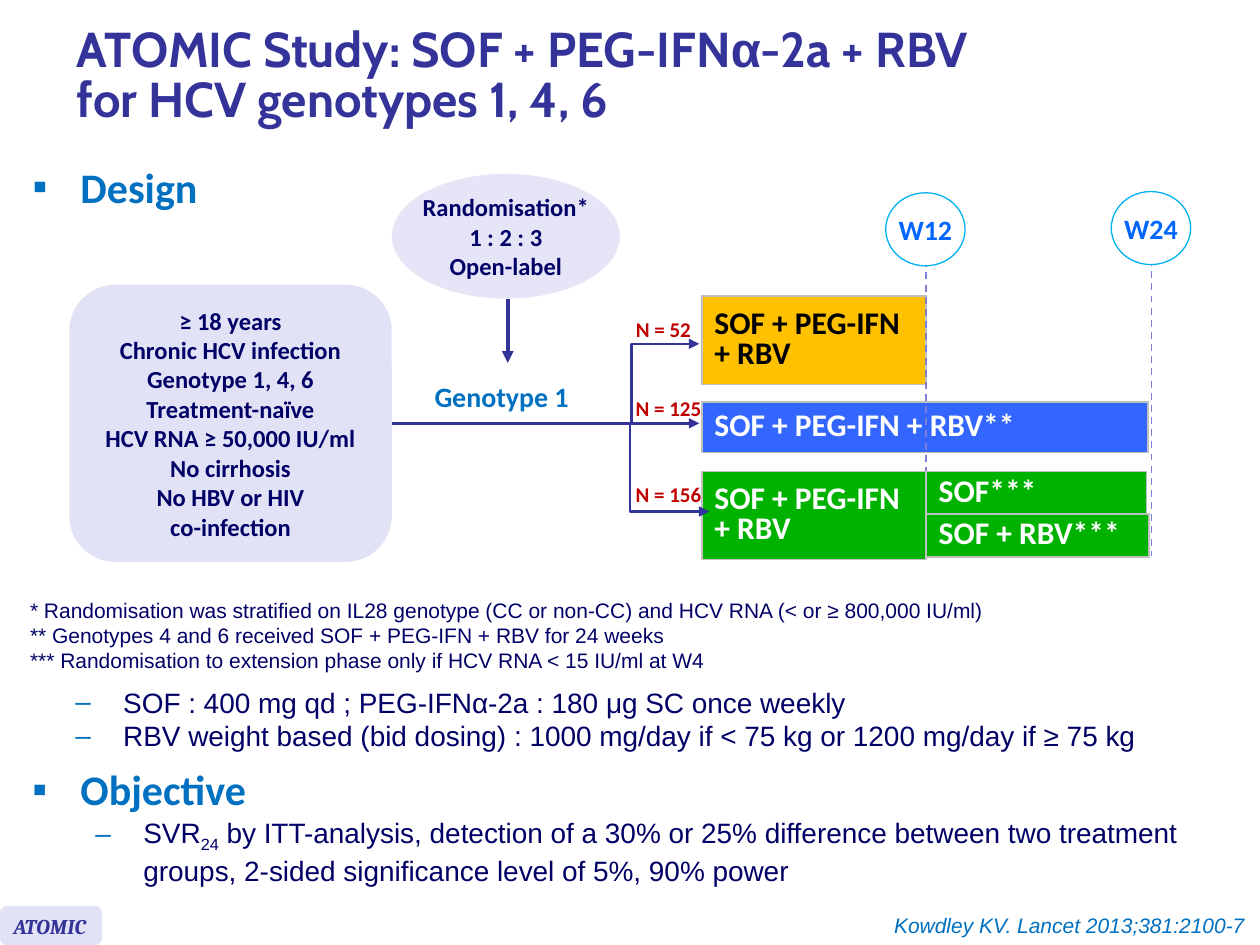
from lxml import etree
from pptx import Presentation
from pptx import util as u
from pptx.dml.color import RGBColor
from pptx.enum import dml, shapes, text
from pptx.oxml import ns

# The slide is a grid of 100 columns by 75 rows of square units.
UNIT = u.Inches(0.1)

NAVY = RGBColor(0x00, 0x00, 0x66)
INDIGO = RGBColor(0x33, 0x33, 0x99)
BLUE = RGBColor(0x00, 0x70, 0xC0)
BRIGHT_BLUE = RGBColor(0x00, 0x66, 0xFF)
SKY = RGBColor(0x00, 0xB0, 0xF0)
ROYAL = RGBColor(0x33, 0x66, 0xFF)
DASH = RGBColor(0x7E, 0x7E, 0xD4)
LAVENDER = RGBColor(0xE2, 0xE2, 0xF6)
PALE = RGBColor(0xE5, 0xE5, 0xF7)
AMBER = RGBColor(0xFF, 0xC0, 0x00)
GREEN = RGBColor(0x00, 0xB2, 0x00)
RED = RGBColor(0xC0, 0x00, 0x00)
SILVER = RGBColor(0xC0, 0xC0, 0xC0)
WHITE = RGBColor(0xFF, 0xFF, 0xFF)
BLACK = RGBColor(0x00, 0x00, 0x00)

CENTER, RIGHT = text.PP_ALIGN.CENTER, text.PP_ALIGN.RIGHT
MIDDLE = text.MSO_ANCHOR.MIDDLE

ARMS_LEFT, WEEK_12, WEEK_24 = 55.7, 73.5, 91.4
ARM_WIDTH = WEEK_12 - ARMS_LEFT
TRUNK_LEFT, TRUNK_TOP = 31.1, 33.6


def grid(*units):
    return [int(unit * UNIT) for unit in units]


def add_element(parent, tag, **attributes):
    return etree.SubElement(parent, ns.qn(tag), attributes)


def add_run(paragraph, words, size, color, font="Calibri", bold=False, italic=False):
    """Add a run, turning each newline into a line break."""
    for index, line in enumerate(words.split("\n")):
        if index:
            paragraph.add_line_break()
        run = paragraph.add_run()
        run.text = line
        run.font.size = u.Pt(size)
        run.font.name = font
        run.font.bold = bold
        run.font.italic = italic
        run.font.color.rgb = color
    return run


def write_lines(frame, lines, size, color, align=None, **style):
    for index, line in enumerate(lines):
        paragraph = frame.add_paragraph() if index else frame.paragraphs[0]
        paragraph.alignment = align
        add_run(paragraph, line, size, color, **style)


def add_box(slide, at, wrap=True):
    frame = slide.shapes.add_textbox(*grid(*at)).text_frame
    frame.word_wrap = wrap
    return frame


def add_label(slide, at, lines, size, color, align=None, wrap=True, **style):
    write_lines(add_box(slide, at, wrap), lines, size, color, align, **style)


def set_bullet(paragraph, character, indent, level=0):
    paragraph.level = level
    properties = paragraph._p.get_or_add_pPr()
    properties.set("marL", str(u.Inches(indent)))
    properties.set("indent", str(-u.Inches(0.38)))
    color = add_element(properties, "a:buClr")
    add_element(color, "a:srgbClr", val=str(BLUE))
    add_element(properties, "a:buFont", typeface="Arial")
    add_element(properties, "a:buChar", char=character)


def add_heading(frame, words):
    paragraph = frame.paragraphs[0]
    set_bullet(paragraph, "▪", 0.38)
    add_run(paragraph, words, 24, BLUE, bold=True)


def add_panel(slide, kind, at, fill, line=None, lines=(), size=14, color=NAVY, wrap=True):
    shape = slide.shapes.add_shape(kind, *grid(*at))
    shape.shadow.inherit = False
    shape.fill.solid()
    shape.fill.fore_color.rgb = fill
    if line is None:
        shape.line.fill.background()
    else:
        shape.line.color.rgb = line
        shape.line.width = u.Pt(0.75)
    frame = shape.text_frame
    frame.word_wrap = wrap
    frame.vertical_anchor = MIDDLE
    write_lines(frame, lines, size, color, CENTER, bold=True)
    return shape


def add_line(slide, start, end, color=INDIGO, width=1.5, arrow=True, bend=None):
    """Draw a connector; bend is the share of its width where an elbow turns."""
    kind = shapes.MSO_CONNECTOR.STRAIGHT if bend is None else shapes.MSO_CONNECTOR.ELBOW
    connector = slide.shapes.add_connector(kind, *grid(*start, *end))
    connector.line.color.rgb = color
    connector.line.width = u.Pt(width)
    properties = connector._element.spPr
    if arrow:
        add_element(connector.line._get_or_add_ln(), "a:tailEnd", type="triangle")
    else:
        connector.line.dash_style = dml.MSO_LINE.DASH
    add_element(properties, "a:effectLst")
    if bend is not None:
        adjustments = properties.find(".//" + ns.qn("a:avLst"))
        add_element(adjustments, "a:gd", name="adj1", fmla=f"val {round(bend * 100000)}")


def add_arm(slide, at, words, fill, color=WHITE):
    """Add a treatment arm as a one-cell table."""
    table = slide.shapes.add_table(1, 1, *grid(*at)).table
    table.first_row = table.horz_banding = False
    cell = table.cell(0, 0)
    cell.vertical_anchor = MIDDLE
    properties = cell._tc.get_or_add_tcPr()
    for side in ("L", "R", "T", "B"):
        border = add_element(properties, f"a:ln{side}", w=str(u.Pt(1)))
        add_element(add_element(border, "a:solidFill"), "a:srgbClr", val=str(SILVER))
    cell.fill.solid()
    cell.fill.fore_color.rgb = fill
    paragraph = cell.text_frame.paragraphs[0]
    paragraph.line_spacing = 0.8
    add_run(paragraph, words, 18, color, bold=True)


def add_title(slide):
    title = slide.shapes.title
    title.left, title.top, title.width, title.height = grid(5.1, 0.8, 91.3, 10.7)
    frame = title.text_frame
    frame.auto_size = text.MSO_AUTO_SIZE.NONE
    frame.vertical_anchor = MIDDLE
    paragraph = frame.paragraphs[0]
    paragraph.alignment = text.PP_ALIGN.LEFT
    paragraph.line_spacing = 0.85
    for words, font in (("ATOMIC Study: SOF + PEG-IFN", "Cabin"), ("α", "Arial"),
                        ("-2a + RBV\nfor HCV genotypes 1, 4, 6", "Cabin")):
        add_run(paragraph, words, 28, INDIGO, font, bold=True)


def add_design(slide):
    add_heading(add_box(slide, (1.6, 12.3, 19.8, 6.3)), "Design")
    add_line(slide, (40.3, 23.7), (40.3, 28.8), width=2.25)
    randomisation = add_panel(
        slide, shapes.MSO_SHAPE.OVAL, (31.1, 13.8, 18.1, 9.9), PALE,
        lines=("Randomisation*", "1 : 2 : 3", "Open-label"), wrap=False)
    frame = randomisation.text_frame
    frame.margin_left = frame.margin_right = frame.margin_top = frame.margin_bottom = 0
    add_panel(slide, shapes.MSO_SHAPE.ROUNDED_RECTANGLE, (5.5, 22.6, 25.6, 22), LAVENDER,
              lines=("≥ 18 years", "Chronic HCV infection", "Genotype 1, 4, 6",
                     "Treatment-naïve", "HCV RNA ≥ 50,000 IU/ml", "No cirrhosis",
                     "No HBV or HIV\nco-infection"))

    add_arm(slide, (ARMS_LEFT, 23.5, ARM_WIDTH, 7), "SOF + PEG-IFN + RBV", AMBER, BLACK)
    add_arm(slide, (ARMS_LEFT, 31.9, 35.4, 4), "SOF + PEG-IFN + RBV**", ROYAL)
    for week, left, top in (("W12", WEEK_12, 15.3), ("W24", WEEK_24, 15.2)):
        add_line(slide, (left, top + 4.4), (left, 44.1), DASH, 1, arrow=False)
        add_panel(slide, shapes.MSO_SHAPE.OVAL, (left - 3.2, top, 6.3, 5.8), WHITE, SKY,
                  (week,), 16, BRIGHT_BLUE, wrap=False)
    add_arm(slide, (ARMS_LEFT, 37.4, ARM_WIDTH, 7), "SOF + PEG-IFN + RBV", GREEN)
    add_arm(slide, (WEEK_12, 40.8, 17.7, 3.4), "SOF + RBV***", GREEN)
    add_arm(slide, (WEEK_12, 37.4, 17.5, 3.4), "SOF***", GREEN)

    for count, top, width in ((52, 24.6, 6.5), (125, 30.9, 7.3), (156, 37.7, 7.3)):
        add_label(slide, (49.4, top, width, 3), (f"N = {count}",), 12, RED, CENTER,
                  wrap=False, bold=True)
    add_label(slide, (33.5, 29.6, 12.8, 3.7), ("Genotype 1",), 16, BLUE, wrap=False, bold=True)
    for end, bend in (((55.5, TRUNK_TOP), None), ((55.5, 27.3), 0.78), ((56.3, 40.6), 0.75)):
        add_line(slide, (TRUNK_LEFT, TRUNK_TOP), end, bend=bend)


def add_notes_and_doses(slide):
    add_label(slide, (1.4, 46.9, 97.4, 7.1), (
        "* Randomisation was stratified on IL28 genotype (CC or non-CC) and HCV RNA "
        "(< or ≥ 800,000 IU/ml)",
        "** Genotypes 4 and 6 received SOF + PEG-IFN + RBV for 24 weeks",
        "*** Randomisation to extension phase only if HCV RNA < 15 IU/ml at W4",
    ), 12, NAVY, font="Arial")
    doses = add_box(slide, (0, 53.9, 100, 6.4))
    write_lines(doses, (
        "SOF : 400 mg qd ; PEG-IFNα-2a : 180 μg SC once weekly",
        "RBV weight based (bid dosing) : 1000 mg/day if < 75 kg or 1200 mg/day if ≥ 75 kg",
    ), 16, NAVY, font="Arial")
    for paragraph in doses.paragraphs:
        set_bullet(paragraph, "–", 0.88, level=1)


def add_objective(slide):
    frame = add_box(slide, (1.6, 60.1, 99.6, 12.1))
    add_heading(frame, "Objective")
    paragraph = frame.add_paragraph()
    set_bullet(paragraph, "–", 0.88, level=1)
    paragraph.space_before = u.Pt(0.7)
    add_run(paragraph, "SVR", 16, NAVY, "Arial")
    subscript = add_run(paragraph, "24", 16, NAVY, "Arial")
    subscript.font._element.set("baseline", "-25000")
    add_run(paragraph, " by ITT-analysis, detection of a 30% or 25% difference between two "
            "treatment groups, 2-sided significance level of 5%, 90% power", 16, NAVY, "Arial")


def add_footer(slide):
    add_panel(slide, shapes.MSO_SHAPE.ROUNDED_RECTANGLE, (0, 71.9, 8.1, 3.1), LAVENDER)
    add_label(slide, (0.1, 72, 8.8, 3), ("ATOMIC",), 12, INDIGO,
              font="Cambria", bold=True, italic=True)
    add_label(slide, (66.8, 71.9, 33, 3), ("Kowdley KV. Lancet 2013;381:2100-7",), 12, BLUE,
              RIGHT, font="Arial", italic=True)


def main():
    presentation = Presentation()
    presentation.slide_width, presentation.slide_height = grid(100, 75)
    slide = presentation.slides.add_slide(presentation.slide_layouts[5])
    add_title(slide)
    add_design(slide)
    add_notes_and_doses(slide)
    add_objective(slide)
    add_footer(slide)
    presentation.save("out.pptx")


if __name__ == "__main__":
    main()
